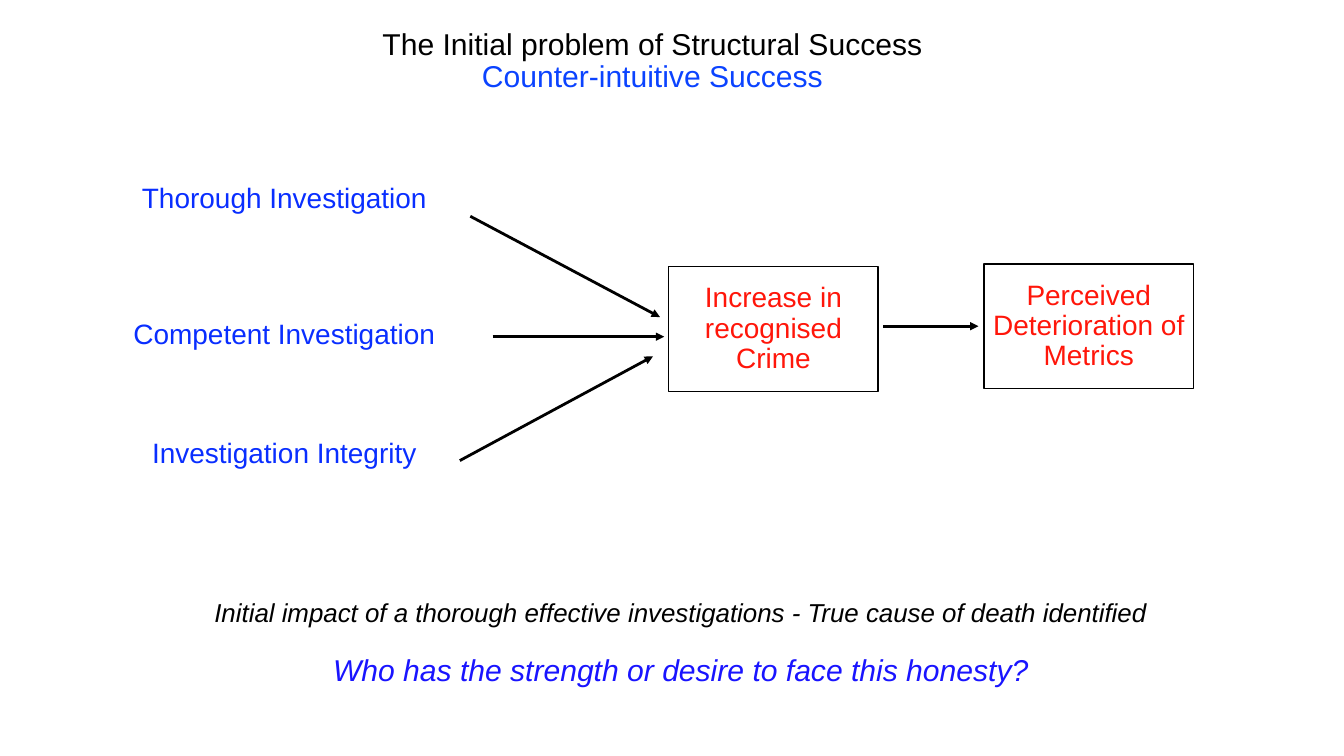
from lxml import etree
from pptx import Presentation
from pptx.dml.color import RGBColor
from pptx.enum.shapes import MSO_CONNECTOR, MSO_SHAPE
from pptx.enum.text import MSO_ANCHOR, MSO_AUTO_SIZE, PP_ALIGN
from pptx.oxml.ns import qn
from pptx.util import Pt

LINE = MSO_CONNECTOR.STRAIGHT
RECT = MSO_SHAPE.RECTANGLE
MIDDLE = MSO_ANCHOR.MIDDLE
FIXED = MSO_AUTO_SIZE.NONE
CENTER = PP_ALIGN.CENTER

FONT = "Arial"
INSET = 4.3
COLORS = {
    "black": "000000",
    "title": "0B43FF",
    "cause": "092EFF",
    "effect": "FF160A",
    "query": "1914FF",
}


def color(name):
    return RGBColor.from_string(COLORS[name])


def write(shape, lines, italic=False, gap=0):
    """Fill a shape with centred lines of (text, size, colour)."""
    frame = shape.text_frame
    frame.word_wrap = True
    frame.auto_size = FIXED
    frame.vertical_anchor = MIDDLE
    frame.margin_left = frame.margin_right = Pt(INSET)
    frame.margin_top = frame.margin_bottom = Pt(INSET)
    for i, (text, size, hue) in enumerate(lines):
        para = frame.paragraphs[0] if i == 0 else frame.add_paragraph()
        para.alignment = CENTER
        para.line_spacing = 0.9
        para.space_before = Pt(gap if i else 0)
        run = para.add_run()
        run.text = text
        font = run.font
        font.name = FONT
        font.size = Pt(size)
        font.bold = False
        font.italic = italic
        font.color.rgb = color(hue)


def add_title(slide, x, y, w, h):
    title = slide.shapes.title
    title.left, title.top, title.width, title.height = Pt(x), Pt(y), Pt(w), Pt(h)
    write(title, [
        ("The Initial problem of Structural Success", 43, "black"),
        ("Counter-intuitive Success", 43, "title"),
    ])


def add_label(slide, text, x, y, w, h):
    box = slide.shapes.add_textbox(Pt(x), Pt(y), Pt(w), Pt(h))
    write(box, [(text, 40, "cause")])


def add_box(slide, text, x, y, w, h):
    box = slide.shapes.add_shape(RECT, Pt(x), Pt(y), Pt(w), Pt(h))
    box.shadow.inherit = False
    box.fill.background()
    box.line.color.rgb = color("black")
    box.line.width = Pt(2)
    write(box, [(text, 40, "effect")])


def add_arrow(slide, x1, y1, x2, y2):
    arrow = slide.shapes.add_connector(LINE, Pt(x1), Pt(y1), Pt(x2), Pt(y2))
    arrow.line.color.rgb = color("black")
    arrow.line.width = Pt(4)
    ln = arrow.line._get_or_add_ln()
    etree.SubElement(ln, qn("a:tailEnd"), type="triangle")
    etree.SubElement(arrow._element.spPr, qn("a:effectLst"))


def add_flow(slide, x, y):
    # Causes, each with its arrow to the first effect
    causes = [
        ("Thorough Investigation", 0, (520, 58, 791, 202)),
        ("Competent Investigation", 194, (552, 230, 797, 230)),
        ("Investigation Integrity", 364, (505, 407, 781, 258)),
    ]
    for text, top, (x1, y1, x2, y2) in causes:
        add_label(slide, text, x, y + top, 508, 68)
        add_arrow(slide, x + x1, y + y1, x + x2, y + y2)

    # Effects
    add_box(slide, "Increase in recognised Crime", x + 803.5, y + 130, 299, 178)
    add_arrow(slide, x + 1110, y + 215, x + 1246, y + 215)
    add_box(slide, "Perceived Deterioration of Metrics", x + 1254, y + 126, 299, 178)


def add_footer(slide, x, y, w, h):
    box = slide.shapes.add_textbox(Pt(x), Pt(y), Pt(w), Pt(h))
    write(box, [
        ("Initial impact of a thorough effective investigations"
         " - True cause of death identified", 37, "black"),
        ("Who has the strength or desire to face this honesty?", 43, "query"),
    ], italic=True, gap=38)


def main():
    deck = Presentation()
    deck.slide_width, deck.slide_height = Pt(1920.24), Pt(1080)
    slide = deck.slides.add_slide(deck.slide_layouts[5])
    add_title(slide, 277, 23, 1310, 131)
    add_flow(slide, 152, 251)
    add_footer(slide, 288, 834.5, 1369, 171)
    deck.save("out.pptx")


if __name__ == "__main__":
    main()
